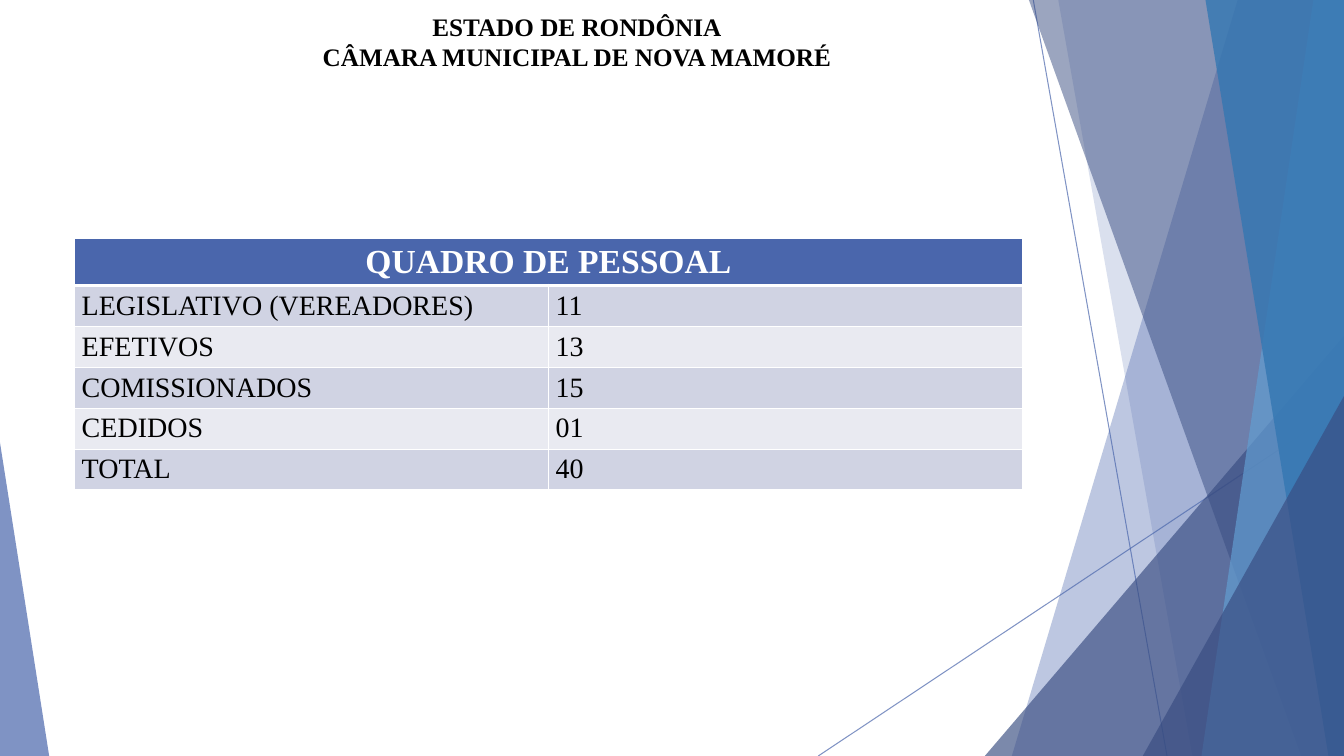
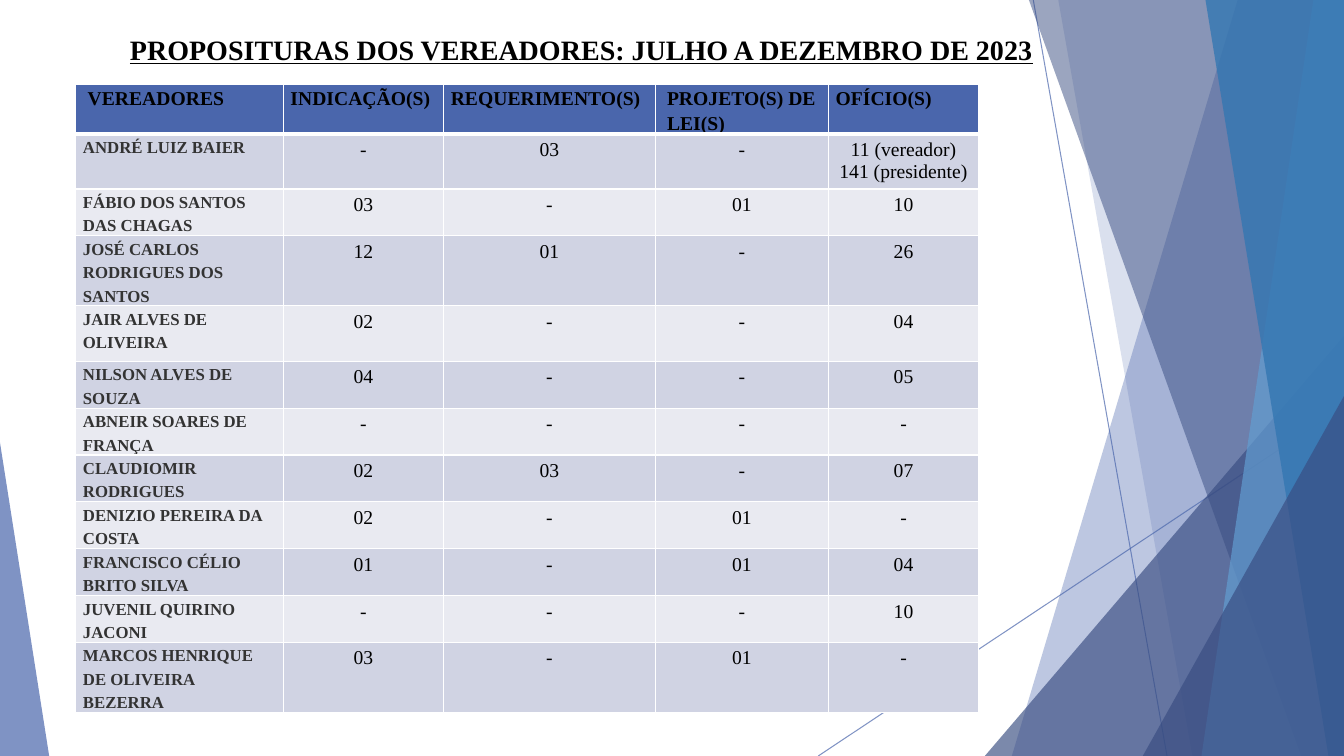
from dataclasses import dataclass

from lxml import etree
from pptx import Presentation
from pptx import util as u
from pptx.dml.color import RGBColor
from pptx.enum import shapes, text
from pptx.oxml import ns

COLORS = {
    "blue": "4A66AC",
    "navy": "384C81",
    "sky": "629DD1",
    "azure": "3477B2",
    "band": "D0D3E3",
    "band_light": "E9EAF1",
    "black": "000000",
    "gray": "333333",
    "white": "FFFFFF",
}
FONT = "Times New Roman"
WIDTH, HEIGHT = 33.87, 19.05  # slide size in cm
TITLE_ONLY = 5

# Background, from back to front
RAYS = [((26.04, 0), (29.41, HEIGHT)), ((WIDTH, 10.24), (20.62, HEIGHT))]
# kind, geometry, colour, opacity in percent
#   facet: x at the top, x at the bottom (runs to the right edge)
#   corner: left, top, width, apex position (stands on the bottom edge)
PANELS = [
    ("facet", (31.19, 25.5), "blue", 36),
    ("facet", (26.67, 30.05), "blue", 20),
    ("corner", (24.82, 8.46, 9.05, 1), "navy", 66),
    ("facet", (25.93, 32.79), "navy", 50),
    ("facet", (33.1, 30.28), "sky", 70),
    ("facet", (30.38, 33.48), "azure", 80),
    ("corner", (28.8, 9.98, 5.07, 1), "navy", 66),
    ("corner", (0, 11.15, 1.24, 0), "blue", 70),
]

STAFF = [
    ["QUADRO DE PESSOAL", ""],
    ["LEGISLATIVO (VEREADORES)", "11"],
    ["EFETIVOS", "13"],
    ["COMISSIONADOS", "15"],
    ["CEDIDOS", "01"],
    ["TOTAL", "40"],
]
PROPOSALS = [
    ["VEREADORES", "INDICAÇÃO(S)", "REQUERIMENTO(S)", "PROJETO(S) DE LEI(S)", "OFÍCIO(S)"],
    ["ANDRÉ LUIZ BAIER", "-", "03", "-", "11 (vereador)\n141 (presidente)"],
    ["FÁBIO DOS SANTOS DAS CHAGAS", "03", "-", "01", "10"],
    ["JOSÉ CARLOS RODRIGUES DOS SANTOS", "12", "01", "-", "26"],
    ["JAIR ALVES DE OLIVEIRA", "02", "-", "-", "04"],
    ["NILSON ALVES DE SOUZA", "04", "-", "-", "05"],
    ["ABNEIR SOARES DE FRANÇA", "-", "-", "-", "-"],
    ["CLAUDIOMIR RODRIGUES", "02", "03", "-", "07"],
    ["DENIZIO PEREIRA DA COSTA", "02", "-", "01", "-"],
    ["FRANCISCO CÉLIO BRITO SILVA", "01", "-", "01", "04"],
    ["JUVENIL QUIRINO JACONI", "-", "-", "-", "10"],
    ["MARCOS HENRIQUE DE OLIVEIRA BEZERRA", "03", "-", "01", "-"],
]


@dataclass
class CellStyle:
    size: float
    color: str = "black"
    bold: bool = False
    centered: bool = False
    spacing: float = 1.0
    after: float = 0
    margin_x: float = 0.18
    margin_y: float = 0


BANNER = CellStyle(24, "white", bold=True, centered=True, margin_x=0.25, margin_y=0.13)
ENTRY = CellStyle(20, spacing=1.15)
HEADING = CellStyle(14, bold=True, spacing=1.15)
HEADING_INDENTED = CellStyle(14, bold=True, spacing=1.15, margin_x=0.3)
COUNCILOR = CellStyle(12, "gray", bold=True, spacing=1.25, after=9.4)
COUNT = CellStyle(14, centered=True, margin_x=0.25, margin_y=0.13)


def staff_style(row, column):
    return BANNER if row == 0 else ENTRY


def proposal_style(row, column):
    if row == 0:
        return HEADING_INDENTED if column in (0, 3) else HEADING
    return COUNCILOR if column == 0 else COUNT


def rgb(name):
    return RGBColor.from_string(COLORS[name])


def set_font(paragraph, size, color, bold):
    font = paragraph.font
    font.name, font.size, font.bold = FONT, u.Pt(size), bold
    font.color.rgb = rgb(color)


def set_opacity(shape, percent):
    for color in shape.element.spPr.iter(ns.qn("a:srgbClr")):
        etree.SubElement(color, ns.qn("a:alpha"), val=str(percent * 1000))


# Background parts
def add_ray(group, start, end):
    points = [u.Cm(value) for value in (*start, *end)]
    ray = group.shapes.add_connector(shapes.MSO_CONNECTOR.STRAIGHT, *points)
    ray.line.width = u.Pt(0.75)
    ray.line.color.rgb = rgb("blue")
    set_opacity(ray, 70)
    etree.SubElement(ray.element.spPr, ns.qn("a:effectLst"))


def add_facet(group, top_x, bottom_x):
    corners = [(WIDTH, 0), (WIDTH, HEIGHT), (bottom_x, HEIGHT)]
    outline = group.shapes.build_freeform(u.Cm(top_x), 0)
    outline.add_line_segments([(u.Cm(x), u.Cm(y)) for x, y in corners], close=True)
    return outline.convert_to_shape()


def add_corner(group, left, top, width, apex):
    corner = group.shapes.add_shape(
        shapes.MSO_SHAPE.ISOSCELES_TRIANGLE,
        u.Cm(left), u.Cm(top), u.Cm(width), u.Cm(HEIGHT - top))
    corner.adjustments[0] = apex
    return corner


def add_background(deck, page):
    """Build the panels on a page, then move them to the slide master."""
    group = page.shapes.add_group_shape()
    for start, end in RAYS:
        add_ray(group, start, end)
    builders = {"facet": add_facet, "corner": add_corner}
    for kind, geometry, color, opacity in PANELS:
        panel = builders[kind](group, *geometry)
        panel.shadow.inherit = False
        panel.fill.solid()
        panel.fill.fore_color.rgb = rgb(color)
        panel.line.fill.background()
        set_opacity(panel, opacity)
    for number, label in enumerate(group.element.iter(ns.qn("p:cNvPr")), 100):
        label.set("id", str(number))
    deck.slide_master.element.cSld.spTree.insert(2, group.element)


# Title
def set_title(page, words, place, size, align, underline=False):
    title = page.shapes.title
    title.left, title.top, title.width, title.height = (u.Cm(value) for value in place)
    frame = title.text_frame
    frame.word_wrap = True
    frame.auto_size = text.MSO_AUTO_SIZE.NONE
    frame.vertical_anchor = text.MSO_ANCHOR.TOP
    para = frame.paragraphs[0]
    para.text = words
    para.alignment = align
    set_font(para, size, "black", True)
    para.font.underline = underline


# Tables
def set_borders(cell, top, bottom):
    properties = cell._tc.get_or_add_tcPr()
    for side, points in (("L", 1), ("R", 1), ("T", top), ("B", bottom)):
        line = etree.SubElement(properties, ns.qn(f"a:ln{side}"), w=str(u.Pt(points)))
        fill = etree.SubElement(line, ns.qn("a:solidFill"))
        etree.SubElement(fill, ns.qn("a:srgbClr"), val=COLORS["white"])


def fill_cell(cell, words, style):
    cell.margin_left = cell.margin_right = u.Cm(style.margin_x)
    cell.margin_top = cell.margin_bottom = u.Cm(style.margin_y)
    cell.text = words
    for para in cell.text_frame.paragraphs:
        para.alignment = text.PP_ALIGN.CENTER if style.centered else text.PP_ALIGN.LEFT
        para.line_spacing = style.spacing
        para.space_after = u.Pt(style.after)
        set_font(para, style.size, style.color, style.bold)


def add_table(page, left, top, widths, heights, rows, style_at):
    frame = page.shapes.add_table(
        len(rows), len(widths), u.Cm(left), u.Cm(top),
        u.Cm(sum(widths)), u.Cm(sum(heights)))
    table = frame.table
    table.horz_banding = False
    for column, width in zip(table.columns, widths):
        column.width = u.Cm(width)
    for r, (row, height) in enumerate(zip(rows, heights)):
        table.rows[r].height = u.Cm(height)
        color = "blue" if r == 0 else "band" if r % 2 else "band_light"
        for c, words in enumerate(row):
            cell = table.cell(r, c)
            fill_cell(cell, words, style_at(r, c))
            set_borders(cell, top=3 if r == 1 else 1, bottom=3 if r == 0 else 1)
            cell.fill.solid()
            cell.fill.fore_color.rgb = rgb(color)
    return table


# Slides
def add_staff_page(page):
    set_title(page, "ESTADO DE RONDÔNIA\vCÂMARA MUNICIPAL DE NOVA MAMORÉ",
              (6.07, 0.15, 16.94, 1.8), 18, text.PP_ALIGN.CENTER)
    table = add_table(page, 1.88, 6, [11.94] * 2, [1.16] + [1.03] * 5, STAFF, staff_style)
    table.cell(0, 0).merge(table.cell(0, 1))


def add_proposals_page(page):
    set_title(page, "PROPOSITURAS DOS VEREADORES: JULHO A DEZEMBRO DE 2023",
              (3.02, 0.69, 23.77, 1.12), 20, text.PP_ALIGN.LEFT, underline=True)
    heights = [1.22, 1.38, 1.18, 1.76, 1.4] + [1.18] * 6 + [1.76]
    add_table(page, 1.91, 2.13, [5.23, 4.04, 5.33, 4.37, 3.78],
              heights, PROPOSALS, proposal_style)


def main():
    deck = Presentation()
    deck.slide_width, deck.slide_height = u.Cm(WIDTH), u.Cm(HEIGHT)
    layout = deck.slide_layouts[TITLE_ONLY]
    staff_page, proposals_page = (deck.slides.add_slide(layout) for _ in range(2))
    add_background(deck, staff_page)
    add_staff_page(staff_page)
    add_proposals_page(proposals_page)
    deck.save("out.pptx")


if __name__ == "__main__":
    main()
